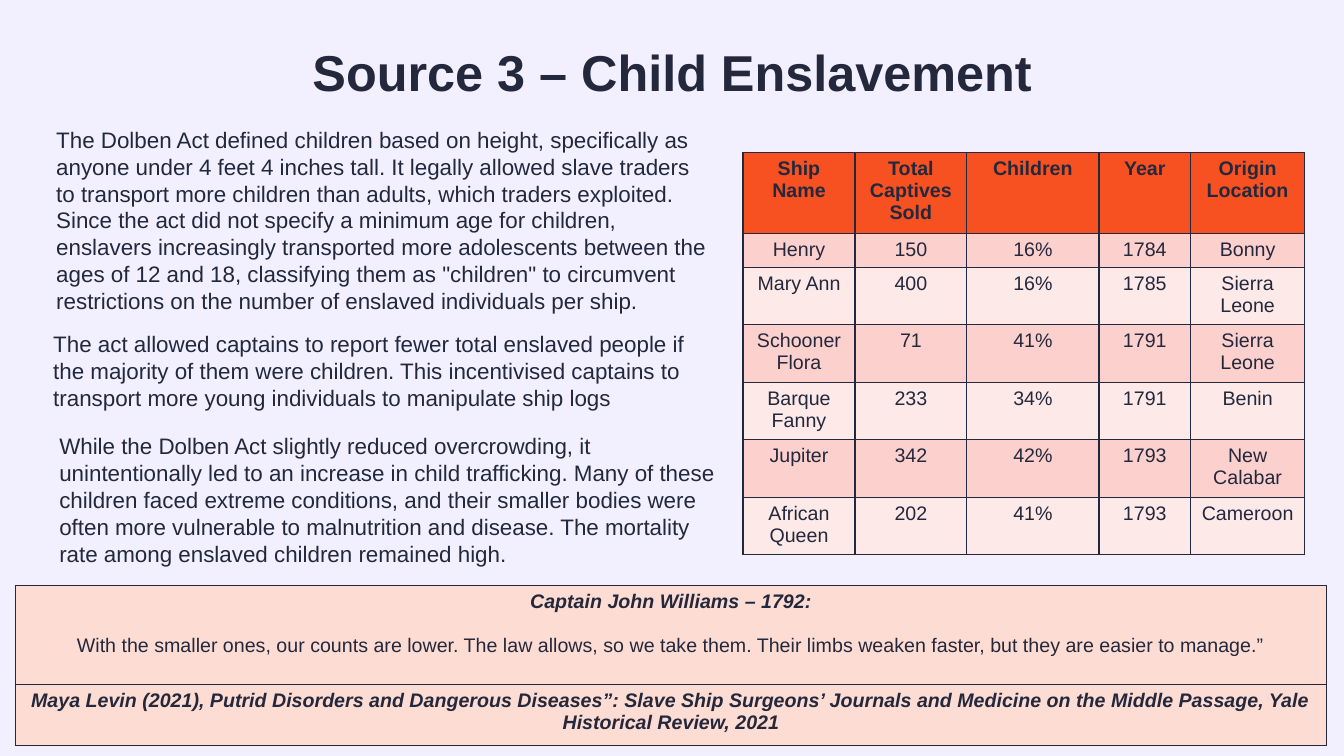
from dataclasses import dataclass

from lxml import etree
from pptx import Presentation
from pptx import util as u
from pptx.dml import color
from pptx.enum import text
from pptx.oxml import ns

PX = 9144  # EMU in one px, 100 px to the inch
INK, PAGE, PEACH = "24283C", "F2F0FF", "FDDCD3"
HEAD, ODD, EVEN = "F75122", "FCD0CD", "FDE9E8"
MID = text.PP_ALIGN.CENTER
BODY = {"size": u.Pt(16)}
CELL = {"size": u.Pt(14)}
BOLD = CELL | {"bold": True}
CITE = BOLD | {"italic": True}


@dataclass
class Para:
    words: str
    font: dict
    form: dict


@dataclass
class Box:
    place: tuple[int, int, int, int]
    para: Para
    frame: dict


@dataclass
class Cell:
    paras: list[Para]
    fill: str


@dataclass
class Grid:
    left: int
    top: int
    cols: list[int]
    rows: list[int]
    cells: list[list[Cell]]


def px(num: int) -> int:
    return u.Emu(num * PX)


def rgb(code: str) -> color.RGBColor:
    return color.RGBColor.from_string(code)


def apply(item, form: dict) -> None:
    for key, value in form.items():
        setattr(item, key, value)


def paint(fill, code: str) -> None:
    fill.solid()
    fill.fore_color.rgb = rgb(code)


def write(frame, paras: list[Para]) -> None:
    for i, para in enumerate(paras):
        line = frame.add_paragraph() if i else frame.paragraphs[0]
        apply(line, para.form)
        run = line.add_run()
        run.text = para.words
        apply(run.font, {"name": "Arial"} | para.font)
        run.font.color.rgb = rgb(INK)


def edge(cell) -> None:
    props = cell._tc.get_or_add_tcPr()
    for i, side in enumerate("LRTB"):
        line = etree.Element(ns.qn(f"a:ln{side}"), w=str(u.Pt(1)))
        fill = etree.SubElement(line, ns.qn("a:solidFill"))
        etree.SubElement(fill, ns.qn("a:srgbClr"), val=INK)
        props.insert(i, line)


def draw_box(slide, box: Box) -> None:
    frame = slide.shapes.add_textbox(*map(px, box.place)).text_frame
    apply(frame, {"word_wrap": True} | box.frame)
    write(frame, [box.para])


def draw_grid(slide, grid: Grid) -> None:
    size = (len(grid.rows), len(grid.cols))
    place = (grid.left, grid.top, sum(grid.cols), sum(grid.rows))
    table = slide.shapes.add_table(*size, *map(px, place)).table
    for col, wide in zip(table.columns, grid.cols):
        col.width = px(wide)
    for row, high, cells in zip(table.rows, grid.rows, grid.cells):
        row.height = px(high)
        for spot, cell in zip(row.cells, cells):
            paint(spot.fill, cell.fill)
            edge(spot)
            write(spot.text_frame, cell.paras)


def mid(words: str, font: dict, gap: int = 0) -> Para:
    form = {"alignment": MID}
    if gap:
        form["space_before"] = u.Pt(gap)
    return Para(words, font, form)


# Title and the three body texts
GROW = {"auto_size": text.MSO_AUTO_SIZE.SHAPE_TO_FIT_TEXT}
BOXES = [
    Box((92, 30, 1150, 90),
        Para("Source 3 – Child Enslavement", {"size": u.Pt(36), "bold": True},
             {"alignment": MID, "line_spacing": 0.9}),
        {"vertical_anchor": text.MSO_ANCHOR.MIDDLE}),
    Box((46, 120, 667, 199),
        Para("The Dolben Act defined children based on height, specifically as "
             "anyone under 4 feet 4 inches tall. It legally allowed slave traders "
             "to transport more children than adults, which traders exploited. "
             "Since the act did not specify a minimum age for children, "
             "enslavers increasingly transported more adolescents between the "
             'ages of 12 and 18, classifying them as "children" to circumvent '
             "restrictions on the number of enslaved individuals per ship.",
             BODY, {}), GROW),
    Box((43, 323, 667, 91),
        Para("The act allowed captains to report fewer total enslaved people if "
             "the majority of them were children. This incentivised captains to "
             "transport more young individuals to manipulate ship logs",
             BODY, {}), GROW),
    Box((49, 424, 683, 145),
        Para("While the Dolben Act slightly reduced overcrowding, it "
             "unintentionally led to an increase in child trafficking. Many of these "
             "children faced extreme conditions, and their smaller bodies were "
             "often more vulnerable to malnutrition and disease. The mortality "
             "rate among enslaved children remained high.",
             BODY, {}), GROW),
]

# Captain's quote and its citation
QUOTE = Grid(15, 581, [1301], [98, 61], [
    [Cell([mid("Captain John Williams – 1792:", CITE),
           mid("With the smaller ones, our counts are lower. The law allows, so we "
               "take them. Their limbs weaken faster, but they are easier to "
               "manage.”", CELL | {"bold": False}, 16)], PEACH)],
    [Cell([mid("Maya Levin (2021), Putrid Disorders and Dangerous Diseases”: Slave "
               "Ship Surgeons’ Journals and Medicine on the Middle Passage, Yale "
               "Historical Review, 2021", CITE)], PEACH)],
])

# Ships and their captives
SHIPS = [
    ("Ship Name", "Total Captives Sold", "Children", "Year", "Origin Location"),
    ("Henry", "150", "16%", "1784", "Bonny"),
    ("Mary Ann", "400", "16%", "1785", "Sierra Leone"),
    ("Schooner Flora", "71", "41%", "1791", "Sierra Leone"),
    ("Barque Fanny", "233", "34%", "1791", "Benin"),
    ("Jupiter", "342", "42%", "1793", "New Calabar"),
    ("African Queen", "202", "41%", "1793", "Cameroon"),
]


def ship_row(i: int, row: tuple) -> list[Cell]:
    fill = HEAD if i == 0 else ODD if i % 2 else EVEN
    font = CELL | {"bold": i == 0}
    return [Cell([mid(words, font)], fill) for words in row]


LOG = Grid(737, 151, [111, 111, 131, 91, 113], [81, 33] + [57] * 5,
           [ship_row(i, row) for i, row in enumerate(SHIPS)])


def main() -> None:
    deck = Presentation()
    apply(deck, {"slide_width": px(1333), "slide_height": px(750)})
    slide = deck.slides.add_slide(deck.slide_layouts[6])
    paint(slide.background.fill, PAGE)
    for box in BOXES:
        draw_box(slide, box)
    for grid in (QUOTE, LOG):
        draw_grid(slide, grid)
    deck.save("out.pptx")


if __name__ == "__main__":
    main()
